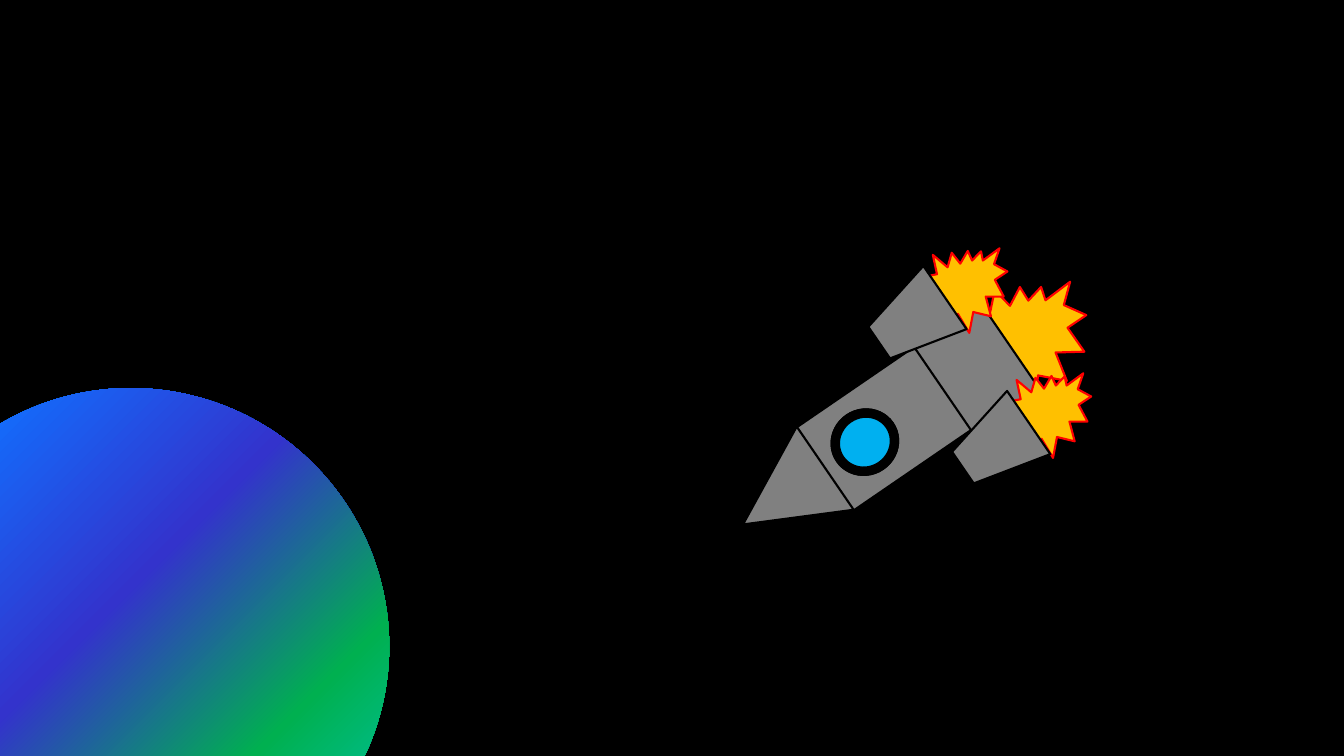
from lxml import etree
from pptx import Presentation
from pptx import util as u
from pptx.dml.color import RGBColor
from pptx.enum import shapes
from pptx.oxml import parse_xml

KIND = shapes.MSO_SHAPE
BLACK, GREY, RED, AMBER, SKY = "000000", "808080", "FF0000", "FFC000", "00B0F0"

# Content: boxes are left, top, width, height in centimetres
PLANET_BOX = (-3.15, 9.8, 12.98, 12.88)
PLANET_ANGLE = 221
PLANET_STOPS = [(0, "3399FF"), (11, "00CCCC"), (34, "00B050"),
                (54, "3333CC"), (77, "1170FF"), (90, "006699")]

HEADING = 235.6
BOOSTER_FLAME_ANGLE = 200.8
BOOSTER_SHIFT = (2.11, 3.15)
WINDOW_BOX = (20.98, 10.29, 1.63, 1.7)

# Kind, box, rotation, fill, line
HULL = [
    (KIND.RECTANGLE, (21.49, 8.08, 2.54, 4.78), HEADING, GREY, BLACK),
    (KIND.EXPLOSION2, (23.52, 6.71, 3.78, 3.91), 197.1, AMBER, RED),
    (KIND.TRAPEZOID, (22.66, 8.23, 3.86, 2.01), HEADING, GREY, BLACK),
]
BOOSTER = [
    (KIND.EXPLOSION2, (22.94, 5.94, 2.34, 2.72), BOOSTER_FLAME_ANGLE, AMBER, RED),
    (KIND.TRAPEZOID, (22.02, 7.06, 1.93, 2.01), HEADING, GREY, BLACK),
]
FRONT = [
    (KIND.FLOWCHART_EXTRACT, (18.49, 11.25, 2.54, 2.51), HEADING, GREY, BLACK),
    (KIND.OVAL, WINDOW_BOX, HEADING, SKY, BLACK),
    (KIND.DONUT, WINDOW_BOX, HEADING, BLACK, BLACK),
]
WINDOW_RIM = 0.114


def colour(value):
    return RGBColor.from_string(value)


def add_part(parent, kind, box, angle, fill, line, shift=(0, 0)):
    left, top, width, height = box
    shape = parent.add_shape(kind, u.Cm(left + shift[0]), u.Cm(top + shift[1]),
                             u.Cm(width), u.Cm(height))
    shape.rotation = angle
    shape.shadow.inherit = False
    shape.fill.solid()
    shape.fill.fore_color.rgb = colour(fill)
    if line:
        shape.line.color.rgb = colour(line)
        shape.line.width = u.Pt(1.5)
    else:
        shape.line.fill.background()
    return shape


def set_corner_gradient(shape, stops):
    """Replace the solid fill by a circular gradient from the lower right corner."""
    stop_xml = "".join(f'<a:gs pos="{position * 1000}"><a:srgbClr val="{value}"/></a:gs>'
                       for position, value in stops)
    gradient = parse_xml(
        '<a:gradFill xmlns:a="http://schemas.openxmlformats.org/drawingml/2006/main"'
        f' rotWithShape="1"><a:gsLst>{stop_xml}</a:gsLst><a:path path="circle">'
        '<a:fillToRect l="100000" t="100000"/></a:path></a:gradFill>')
    properties = shape.element.spPr
    solid = next(child for child in properties
                 if etree.QName(child).localname == "solidFill")
    properties.replace(solid, gradient)


def main():
    presentation = Presentation()
    presentation.slide_width, presentation.slide_height = u.Cm(33.87), u.Cm(19.05)
    slide = presentation.slides.add_slide(presentation.slide_layouts[6])

    # Space
    slide.background.fill.solid()
    slide.background.fill.fore_color.rgb = colour(BLACK)

    # Planet
    planet = add_part(slide.shapes, KIND.OVAL, PLANET_BOX, PLANET_ANGLE, SKY, None)
    set_corner_gradient(planet, PLANET_STOPS)

    # Rocket, from back to front
    rocket = slide.shapes.add_group_shape().shapes
    for part in HULL:
        add_part(rocket, *part)
    for side in range(2):
        shift = [side * step for step in BOOSTER_SHIFT]
        for part in BOOSTER:
            add_part(rocket, *part, shift=shift)
    for part in FRONT:
        shape = add_part(rocket, *part)
    shape.adjustments[0] = WINDOW_RIM

    presentation.save("out.pptx")


if __name__ == "__main__":
    main()
